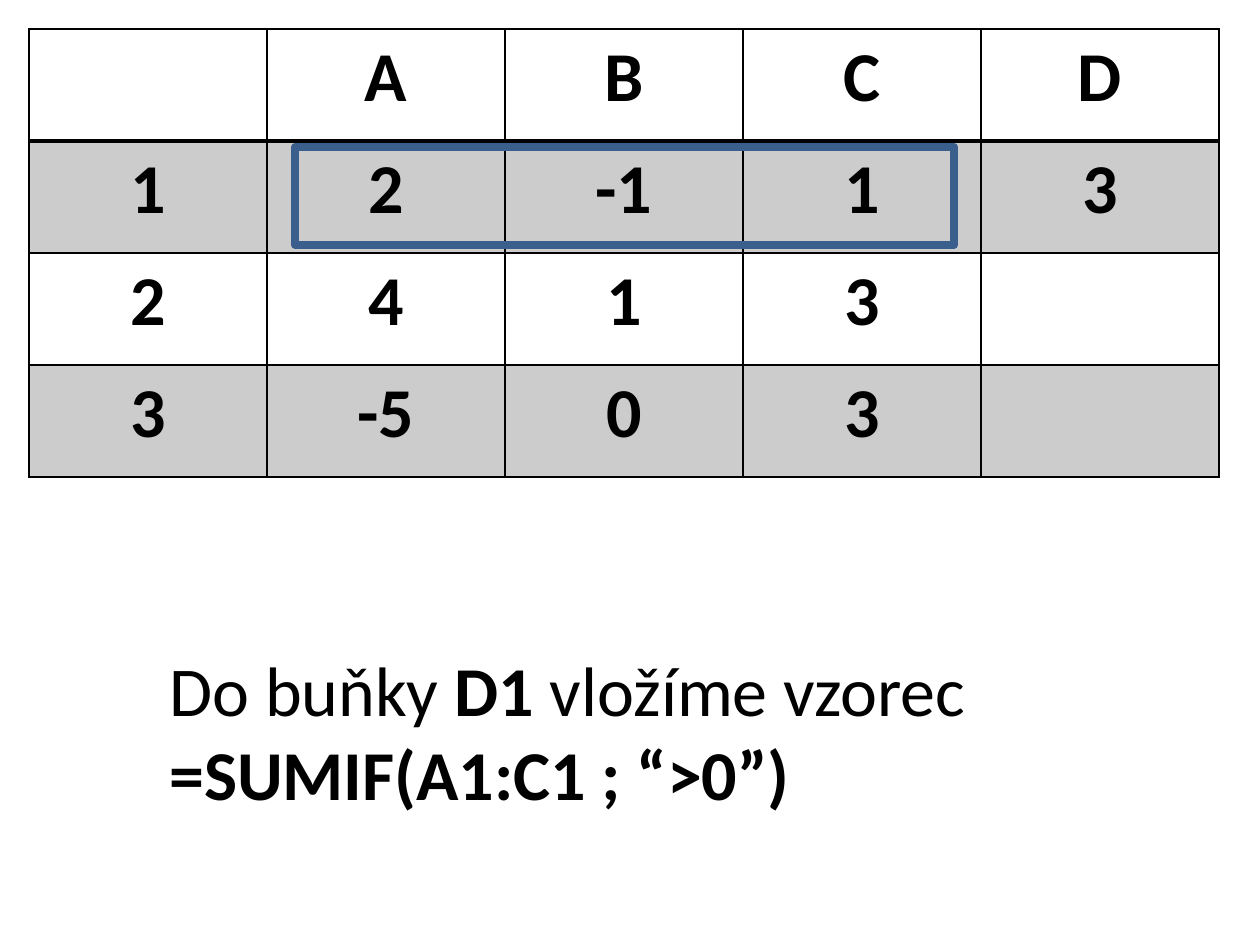
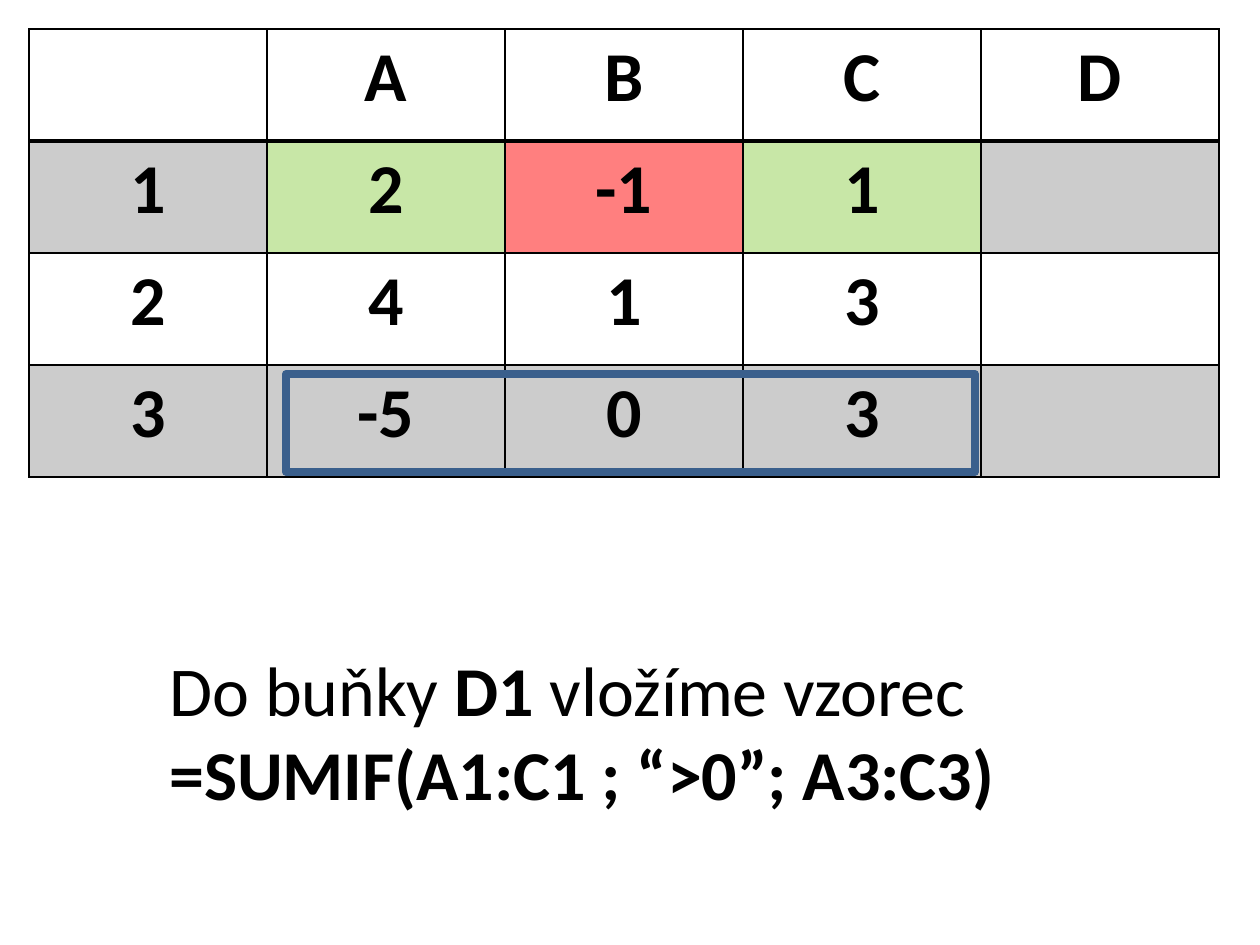
import dataclasses

import pptx
import pptx.dml.color
import pptx.enum.shapes
import pptx.enum.text
import pptx.oxml.ns
import pptx.util
from lxml import etree

PX = 914400 / 126


@dataclasses.dataclass(frozen=True)
class Theme:
    font: str = "Calibri"
    text_size: int = 40
    black: str = "000000"
    green: str = "92D050"
    red: str = "FF0000"
    frame: str = "3A5F8C"
    frame_width: float = 4.5
    band_alpha: int = 20
    highlight_alpha: int = 50


THEME = Theme()
COLUMN_WIDTH, ROW_HEIGHT = 238, 112

SLIDES = [
    {
        "rows": ["|A|B|C|D", "1|2|-1|1|3", "2|4|1|3|", "3|-5|0|3|"],
        "highlights": {},
        "frame": (295, 147, 659, 98),
        "formula": "=SUMIF(A1:C1 ; “>0”)",
    },
    {
        "rows": ["|A|B|C|D", "1|2|-1|1|", "2|4|1|3|", "3|-5|0|3|"],
        "highlights": {(1, 1): THEME.green, (1, 2): THEME.red, (1, 3): THEME.green},
        "frame": (286, 374, 689, 98),
        "formula": "=SUMIF(A1:C1 ; “>0”; A3:C3)",
    },
]


def px(*lengths):
    return [pptx.util.Emu(round(length * PX)) for length in lengths]


def format_runs(paragraph, bold_runs):
    for run, bold in zip(paragraph.runs, bold_runs):
        run.font.name = THEME.font
        run.font.size = pptx.util.Pt(THEME.text_size)
        run.font.bold = bold
        run.font.color.rgb = pptx.dml.color.RGBColor.from_string(THEME.black)


presentation = pptx.Presentation()
presentation.slide_width, presentation.slide_height = px(1260, 945)
qn = pptx.oxml.ns.qn

for content in SLIDES:
    slide = presentation.slides.add_slide(presentation.slide_layouts[6])

    # Spreadsheet grid
    rows = [line.split("|") for line in content["rows"]]
    row_count, column_count = len(rows), len(rows[0])
    table = slide.shapes.add_table(
        row_count, column_count,
        *px(29, 29, column_count * COLUMN_WIDTH, row_count * ROW_HEIGHT),
    ).table
    table.horz_banding = False
    for column in table.columns:
        column.width = px(COLUMN_WIDTH)[0]
    for row in table.rows:
        row.height = px(ROW_HEIGHT)[0]

    for row_index, row in enumerate(rows):
        for column_index, value in enumerate(row):
            cell = table.cell(row_index, column_index)
            cell.text_frame.text = value
            paragraph = cell.text_frame.paragraphs[0]
            paragraph.alignment = pptx.enum.text.PP_ALIGN.CENTER
            format_runs(paragraph, [True])

            properties = cell._tc.get_or_add_tcPr()
            for side in "LRTB":
                under_header = (row_index, side) in [(0, "B"), (1, "T")]
                width = pptx.util.Pt(2 if under_header else 1)
                border = etree.SubElement(properties, qn(f"a:ln{side}"), w=str(width))
                border_fill = etree.SubElement(border, qn("a:solidFill"))
                etree.SubElement(border_fill, qn("a:srgbClr"), val=THEME.black)

            highlight = content["highlights"].get((row_index, column_index))
            if highlight or row_index % 2:
                cell.fill.solid()
                cell.fill.fore_color.rgb = pptx.dml.color.RGBColor.from_string(
                    highlight or THEME.black)
                alpha = THEME.highlight_alpha if highlight else THEME.band_alpha
                color = properties.find(qn("a:solidFill"))[0]
                etree.SubElement(color, qn("a:alpha"), val=str(alpha * 1000))
            else:
                cell.fill.background()

    # Formula explanation
    text_box = slide.shapes.add_textbox(*px(157, 640, 994, 183))
    text_box.text_frame.word_wrap = True
    paragraph = text_box.text_frame.paragraphs[0]
    for text in ("Do buňky ", "D1 ", "vložíme vzorec ", content["formula"]):
        paragraph.add_run().text = text
    format_runs(paragraph, [False, True, False, True])

    # Frame around the summed range
    frame = slide.shapes.add_shape(
        pptx.enum.shapes.MSO_SHAPE.RECTANGLE, *px(*content["frame"]))
    frame.shadow.inherit = False
    frame.fill.background()
    frame.line.color.rgb = pptx.dml.color.RGBColor.from_string(THEME.frame)
    frame.line.width = pptx.util.Pt(THEME.frame_width)

presentation.save("out.pptx")
